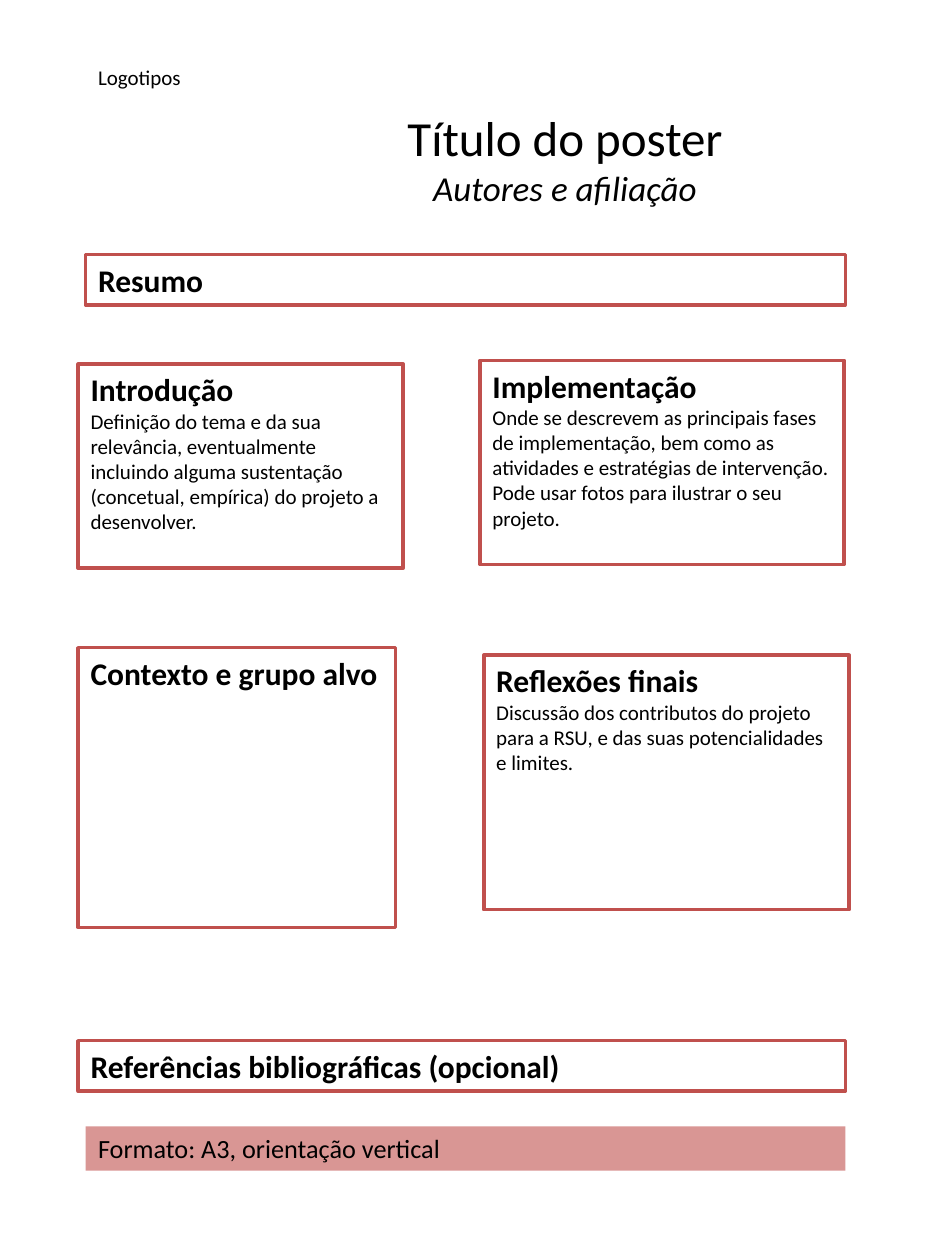
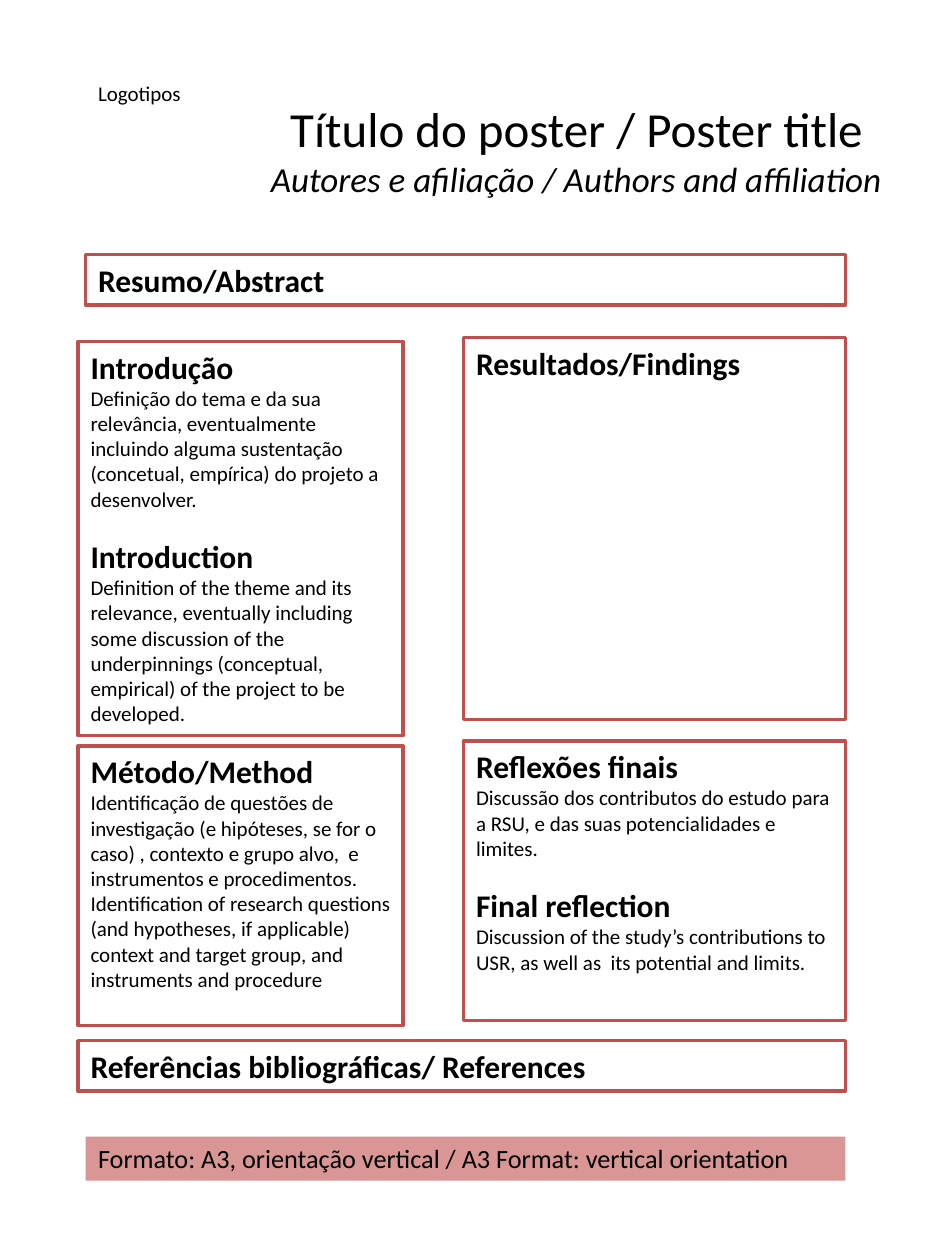
from pptx import Presentation
from pptx.dml.color import RGBColor
from pptx.enum.shapes import MSO_SHAPE
from pptx.enum.text import MSO_ANCHOR, MSO_AUTO_SIZE, PP_ALIGN
from pptx.util import Inches, Pt

BLACK = RGBColor(0x00, 0x00, 0x00)
WHITE = RGBColor(0xFF, 0xFF, 0xFF)
RED = RGBColor(0xC0, 0x50, 0x4D)
ROSE = RGBColor(0xD9, 0x96, 0x94)
FONT = "Calibri"
LEFT = 0.62
BAND_LEFT, BAND_WIDTH = 0.68, 6.03
BLOCK_GAP = 14.6

INTRODUCTION = (
    "Introdução",
    "Definição do tema e da sua relevância, eventualmente incluindo alguma sustentação "
    "(concetual, empírica) do projeto a desenvolver.",
)

POSTERS = [
    {
        "title": "Título do poster",
        "authors": "Autores e afiliação",
        "title_box": (1.86, 0.42, 5.25, 1.67),
        "logos_top": 0.46,
        "abstract": "Resumo",
        "references": "Referências bibliográficas (opcional)",
        "format": "Formato: A3, orientação vertical",
        "format_top": 8.94,
        "sections": [
            ((LEFT, 2.89, 2.58, 1.62), [INTRODUCTION]),
            ((3.81, 2.86, 2.89, 1.62), [(
                "Implementação",
                "Onde se descrevem as principais fases de implementação, bem como as atividades "
                "e estratégias de intervenção. Pode usar fotos para ilustrar o seu projeto.",
            )]),
            ((3.84, 5.2, 2.9, 2.02), [(
                "Reflexões finais",
                "Discussão dos contributos do projeto para a RSU, e das suas potencialidades "
                "e limites.",
            )]),
            ((LEFT, 5.14, 2.52, 2.22), [("Contexto e grupo alvo",)]),
        ],
    },
    {
        "title": "Título do poster / Poster title",
        "authors": "Autores e afiliação / Authors and affiliation",
        "title_box": (1.91, 0.35, 5.33, 1.67),
        "logos_top": 0.59,
        "abstract": "Resumo/Abstract",
        "references": "Referências bibliográficas/ References",
        "format": "Formato: A3, orientação vertical / A3 Format: vertical orientation",
        "format_top": 9.02,
        "sections": [
            ((LEFT, 2.71, 2.58, 3.13), [INTRODUCTION, (
                "Introduction",
                "Definition of the theme and its relevance, eventually including some discussion "
                "of the underpinnings (conceptual, empirical) of the project to be developed.",
            )]),
            ((3.68, 2.68, 3.03, 3.03), [("Resultados/Findings",)]),
            ((3.68, 5.88, 3.03, 2.22), [(
                "Reflexões finais",
                "Discussão dos contributos do estudo para a RSU, e das suas potencialidades "
                "e limites.",
            ), (
                "Final reflection",
                "Discussion of the study’s contributions to USR, as well as  its potential "
                "and limits.",
            )]),
            ((LEFT, 5.92, 2.58, 2.22), [(
                "Método/Method",
                "Identificação de questões de investigação (e hipóteses, se for o caso) , "
                "contexto e grupo alvo,  e instrumentos e procedimentos.",
                "Identification of research questions (and hypotheses, if applicable) context "
                "and target group, and instruments and procedure",
            )]),
        ],
    },
]


def write(frame, text, size=12, bold=False, italic=False, align=PP_ALIGN.LEFT, before=0):
    paragraph = frame.paragraphs[0]
    if paragraph.runs:
        paragraph = frame.add_paragraph()
    paragraph.alignment = align
    paragraph.space_before = Pt(before)
    run = paragraph.add_run()
    run.text = text
    run.font.name = FONT
    run.font.size = Pt(size)
    run.font.bold = bold
    run.font.italic = italic
    run.font.color.rgb = BLACK


def add_box(slide, box, fill=WHITE, line=RED):
    shape = slide.shapes.add_shape(MSO_SHAPE.RECTANGLE, *map(Inches, box))
    shape.shadow.inherit = False
    shape.fill.solid()
    shape.fill.fore_color.rgb = fill
    if line is None:
        shape.line.fill.background()
    else:
        shape.line.color.rgb = line
        shape.line.width = Pt(2)
    shape.text_frame.word_wrap = True
    shape.text_frame.vertical_anchor = MSO_ANCHOR.TOP
    return shape.text_frame


presentation = Presentation()
presentation.slide_width = Inches(7.5)
presentation.slide_height = Inches(10)

for poster in POSTERS:
    slide = presentation.slides.add_slide(presentation.slide_layouts[5])

    title = slide.shapes.title
    title.left, title.top, title.width, title.height = map(Inches, poster["title_box"])
    title.text_frame.auto_size = MSO_AUTO_SIZE.NONE
    title.text_frame.vertical_anchor = MSO_ANCHOR.MIDDLE
    write(title.text_frame, poster["title"], size=28, align=PP_ALIGN.CENTER)
    write(title.text_frame, poster["authors"], size=20, italic=True, align=PP_ALIGN.CENTER)

    logos = slide.shapes.add_textbox(
        Inches(BAND_LEFT), Inches(poster["logos_top"]), Inches(1.81), Inches(0.3))
    logos.text_frame.word_wrap = True
    write(logos.text_frame, "Logotipos")

    bands = [
        ((BAND_LEFT, 2.02, BAND_WIDTH, 0.4), [(poster["abstract"],)]),
        ((LEFT, 8.26, 6.09, 0.4), [(poster["references"],)]),
    ]
    for box, blocks in bands + poster["sections"]:
        frame = add_box(slide, box)
        for index, (heading, *texts) in enumerate(blocks):
            write(frame, heading, size=18, bold=True, before=BLOCK_GAP if index else 0)
            for text in texts:
                write(frame, text)

    format_box = (BAND_LEFT, poster["format_top"], BAND_WIDTH, 0.35)
    write(add_box(slide, format_box, fill=ROSE, line=None), poster["format"], size=15)

presentation.save("out.pptx")
